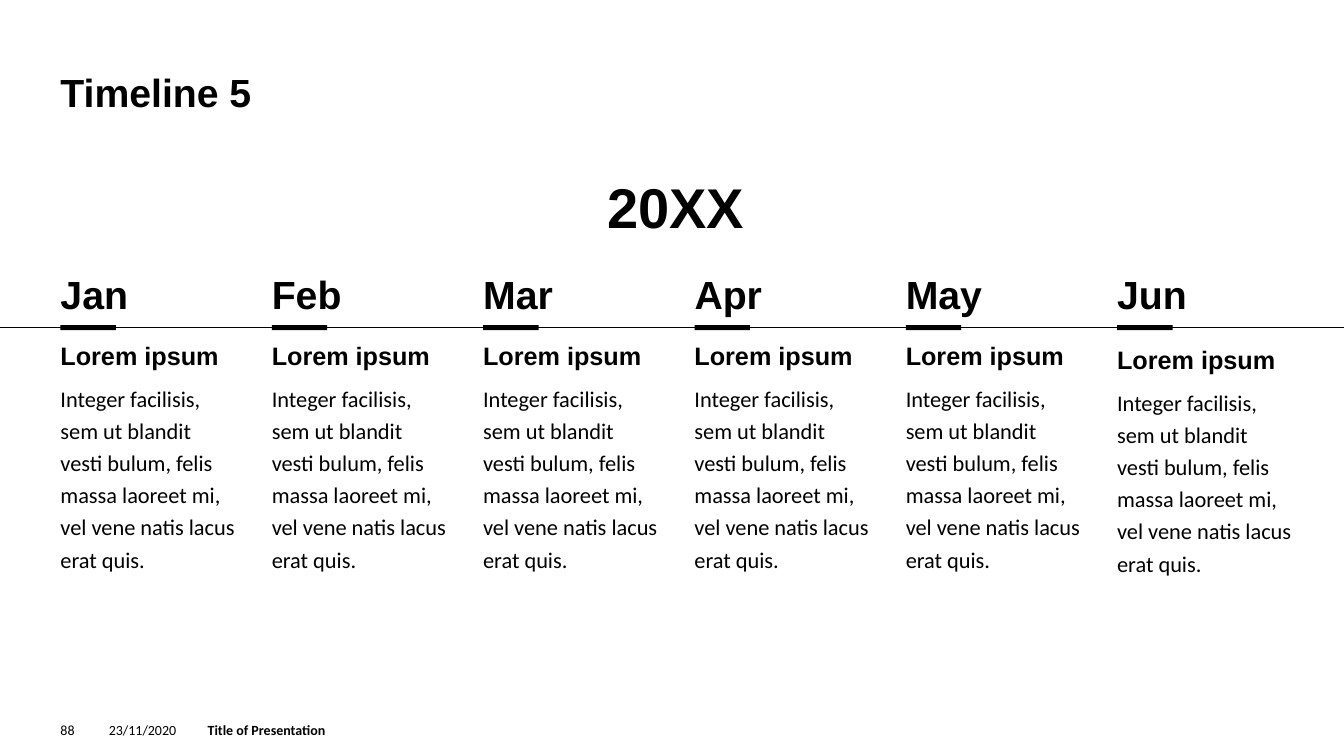
import pptx
import pptx.util
import pptx.dml.color
import pptx.enum.shapes
import pptx.enum.text
import pptx.oxml.ns
from lxml import etree

Inches = pptx.util.Inches
Pt = pptx.util.Pt
ANCHOR = pptx.enum.text.MSO_ANCHOR
ALIGN = pptx.enum.text.PP_ALIGN
COLORS = {"ink": "000000", "paper": "FFFFFF"}
HEADING, BODY = "Arial", "Calibri"
MARGIN, COLUMN_STEP, COLUMN_WIDTH = 0.6, 2.1, 1.73
COLUMN_STEP = (11.08 - MARGIN) / 5
AXIS_Y, BODY_BOTTOM = 3.25, 6.67
MARK_WIDTH, MARK_HEIGHT = 0.55, 0.05
FOOTER_Y, FOOTER_HEIGHT = 7.16, 0.16
MONTHS = ["Jan", "Feb", "Mar", "Apr", "May", "Jun"]
DETAIL = ("Integer facilisis, sem ut blandit vesti bulum, felis massa "
          "laoreet mi, vel vene natis lacus erat quis.")


def color(name):
    return pptx.dml.color.RGBColor.from_string(COLORS[name])


def write(box, lines, anchor=ANCHOR.TOP, align=ALIGN.LEFT, wrap=True, bottom=0):
    frame = box.text_frame
    frame.margin_left = frame.margin_top = frame.margin_right = 0
    frame.margin_bottom = Inches(bottom)
    frame.vertical_anchor = anchor
    frame.word_wrap = wrap
    for index, (text, font_name, size, bold) in enumerate(lines):
        para = frame.add_paragraph() if index else frame.paragraphs[0]
        para.text = text
        para.alignment = align
        para.font.name = font_name
        para.font.size = Pt(size)
        para.font.bold = bold
        para.font.color.rgb = color("ink")
    return frame


deck = pptx.Presentation()
deck.slide_width, deck.slide_height = Inches(13.33), Inches(7.5)
page = deck.slides.add_slide(deck.slide_layouts[6])
page.background.fill.solid()
page.background.fill.fore_color.rgb = color("paper")

title = page.shapes.add_textbox(Inches(MARGIN), Inches(0.68), Inches(12.21), Inches(0.47))
write(title, [("Timeline 5", HEADING, 28, True)])

footer = [(MARGIN, 0.31, "88", False),
          (1.08, 0.87, "23/11/2020", False),
          (2.06, 8.43, "Title of Presentation", True)]
for left, width, text, bold in footer:
    box = page.shapes.add_textbox(Inches(left), Inches(FOOTER_Y), Inches(width), Inches(FOOTER_HEIGHT))
    write(box, [(text, BODY, 10, bold)], anchor=ANCHOR.MIDDLE)

axis = page.shapes.add_connector(pptx.enum.shapes.MSO_CONNECTOR.STRAIGHT,
                                 0, Inches(AXIS_Y), deck.slide_width, Inches(AXIS_Y))
axis.line.color.rgb = color("ink")
axis.line.width = Pt(0.75)
etree.SubElement(axis._element.spPr, pptx.oxml.ns.qn("a:effectLst"))

for column, month in enumerate(MONTHS):
    left = Inches(MARGIN + column * COLUMN_STEP)
    mark = page.shapes.add_shape(pptx.enum.shapes.MSO_SHAPE.RECTANGLE,
                                 left, Inches(AXIS_Y - MARK_HEIGHT / 2),
                                 Inches(MARK_WIDTH), Inches(MARK_HEIGHT))
    mark.shadow.inherit = False
    mark.fill.solid()
    mark.fill.fore_color.rgb = color("ink")
    mark.line.fill.background()
    write(mark, [(month, HEADING, 28, True)], anchor=ANCHOR.BOTTOM, wrap=False, bottom=0.2)

    top = 3.36 if month == "Jun" else 3.32
    box = page.shapes.add_textbox(left, Inches(top), Inches(COLUMN_WIDTH), Inches(BODY_BOTTOM - top))
    frame = write(box, [("Lorem ipsum", HEADING, 18, True), (DETAIL, BODY, 16, False)])
    for para in frame.paragraphs:
        para.line_spacing = 1.2
    detail = frame.paragraphs[1]
    detail.level = 1
    detail.space_before = Pt(6)
    indent = detail._p.get_or_add_pPr()
    indent.set("marL", "0")
    indent.set("indent", "0")

year = page.shapes.add_textbox(Inches(5.9), Inches(1.74), Inches(1.6), Inches(0.64))
write(year, [("20XX", HEADING, 40, True)], anchor=ANCHOR.BOTTOM, align=ALIGN.CENTER)

deck.save("out.pptx")
